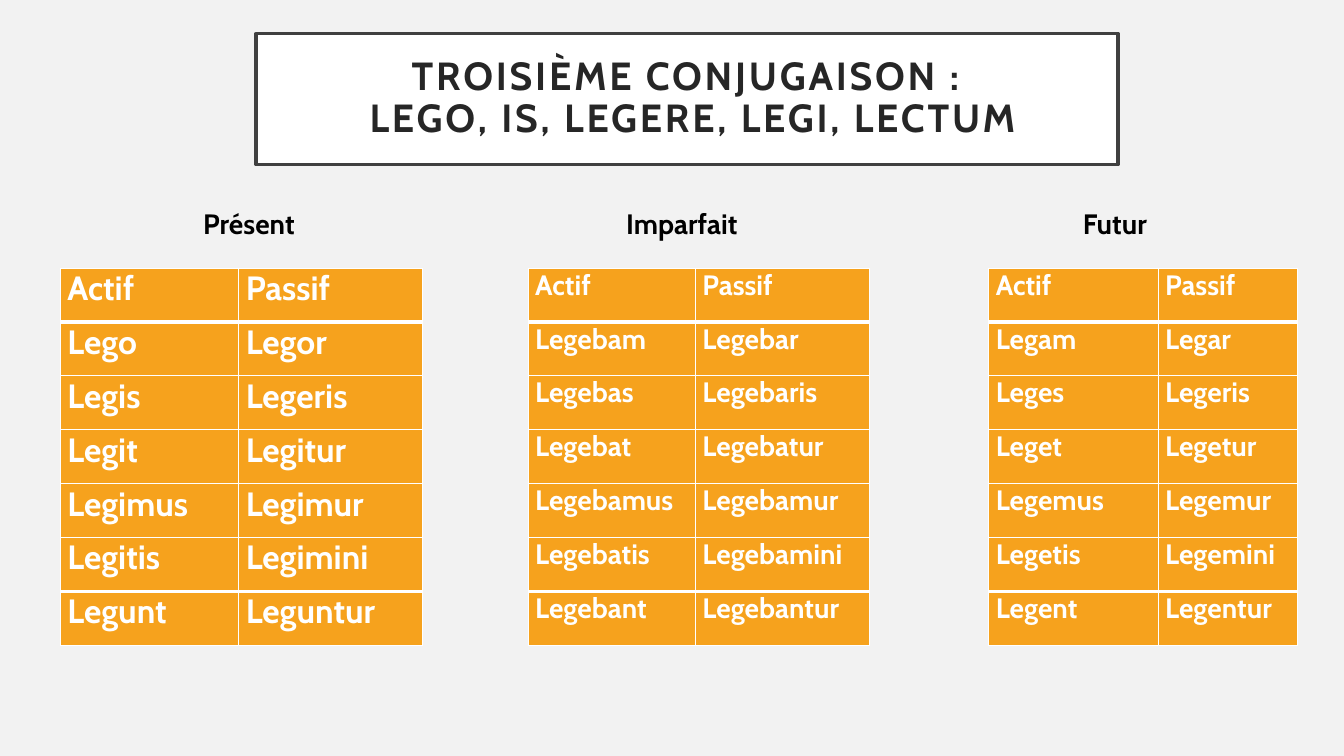
from lxml.etree import SubElement
from pptx import Presentation
from pptx.dml.color import RGBColor
from pptx.enum.text import MSO_ANCHOR, MSO_AUTO_SIZE, PP_ALIGN
from pptx.oxml.ns import qn
from pptx.util import Pt

FONT = "Cabin"
BACKGROUND = RGBColor(0xF2, 0xF2, 0xF2)
WHITE = RGBColor(0xFF, 0xFF, 0xFF)
BLACK = RGBColor(0, 0, 0)
ORANGE = RGBColor(0xF6, 0xA2, 0x1D)
FRAME = RGBColor(0x40, 0x40, 0x40)
TITLE_INK = RGBColor(0x26, 0x26, 0x26)

TITLE = "TROISIÈME CONJUGAISON :\v LEGO, IS, LEGERE, LEGI, LECTUM"
HEADER = ("Actif", "Passif")
TENSES = [
    {"name": "Présent", "left": 43.2, "widths": (127.4, 131), "size": 24,
     "forms": [("Lego", "Legor"), ("Legis", "Legeris"), ("Legit", "Legitur"),
               ("Legimus", "Legimur"), ("Legitis", "Legimini"),
               ("Legunt", "Leguntur")]},
    {"name": "Imparfait", "left": 377.3, "widths": (119.5, 124.6), "size": 20,
     "forms": [("Legebam", "Legebar"), ("Legebas", "Legebaris"),
               ("Legebat", "Legebatur"), ("Legebamus", "Legebamur"),
               ("Legebatis", "Legebamini"), ("Legebant", "Legebantur")]},
    {"name": "Futur", "left": 706.3, "widths": (121, 99.4), "size": 20,
     "forms": [("Legam", "Legar"), ("Leges", "Legeris"), ("Leget", "Legetur"),
               ("Legemus", "Legemur"), ("Legetis", "Legemini"),
               ("Legent", "Legentur")]},
]
LABEL_LEFT, LABEL_STEP, LABEL_TOP = 111.6, 309.25, 144
LABEL_WIDTH, LABEL_HEIGHT = 132.5, 31.5
TABLE_TOP, ROW_HEIGHT = 191.5, 38.5
THIN, THICK = 1, 3


def style(p, size, color):
    p.font.name = FONT
    p.font.size = Pt(size)
    p.font.bold = True
    p.font.color.rgb = color


def set_borders(cell, top, bottom):
    tcPr = cell._tc.get_or_add_tcPr()
    for tag, width in (("lnL", THIN), ("lnR", THIN), ("lnT", top), ("lnB", bottom)):
        ln = SubElement(tcPr, qn(f"a:{tag}"), w=str(Pt(width)))
        fill = SubElement(ln, qn("a:solidFill"))
        SubElement(fill, qn("a:srgbClr"), val=str(WHITE))


def add_title(slide):
    sp = slide.shapes.title
    sp.left, sp.top, sp.width, sp.height = Pt(183), Pt(24), Pt(615.5), Pt(93.5)
    sp.fill.solid()
    sp.fill.fore_color.rgb = WHITE
    sp.line.color.rgb = FRAME
    sp.line.width = Pt(2.5)
    tf = sp.text_frame
    tf.word_wrap = True
    tf.vertical_anchor = MSO_ANCHOR.MIDDLE
    tf.margin_left = tf.margin_right = tf.margin_top = tf.margin_bottom = Pt(14.4)
    p = tf.paragraphs[0]
    p.text = TITLE
    p.alignment = PP_ALIGN.CENTER
    p.line_spacing = 0.9
    style(p, 28, TITLE_INK)
    for r in p.runs:
        r._r.get_or_add_rPr().set("spc", "200")


def add_label(slide, text, left):
    sp = slide.shapes.add_textbox(Pt(left), Pt(LABEL_TOP), Pt(LABEL_WIDTH), Pt(LABEL_HEIGHT))
    tf = sp.text_frame
    tf.word_wrap = True
    tf.auto_size = MSO_AUTO_SIZE.SHAPE_TO_FIT_TEXT
    tf.vertical_anchor = MSO_ANCHOR.MIDDLE
    p = tf.paragraphs[0]
    p.text = text
    p.alignment = PP_ALIGN.CENTER
    style(p, 20, BLACK)


def add_forms(slide, tense):
    rows = [HEADER, *tense["forms"]]
    last = len(rows) - 1
    widths = tense["widths"]
    table = slide.shapes.add_table(
        len(rows), len(widths), Pt(tense["left"]), Pt(TABLE_TOP),
        Pt(sum(widths)), Pt(ROW_HEIGHT * len(rows))).table
    table.horz_banding = False
    for column, width in zip(table.columns, widths):
        column.width = Pt(width)
    for i, row in enumerate(rows):
        table.rows[i].height = Pt(ROW_HEIGHT)
        top = THICK if i in (1, last) else THIN
        bottom = THICK if i in (0, last - 1) else THIN
        for j, text in enumerate(row):
            cell = table.cell(i, j)
            set_borders(cell, top, bottom)
            cell.fill.solid()
            cell.fill.fore_color.rgb = ORANGE
            cell.margin_left = cell.margin_right = Pt(5)
            cell.margin_top = cell.margin_bottom = 0
            p = cell.text_frame.paragraphs[0]
            p.text = text
            style(p, tense["size"], WHITE)


def main():
    prs = Presentation()
    prs.slide_width, prs.slide_height = Pt(960), Pt(540)
    slide = prs.slides.add_slide(prs.slide_layouts[5])
    slide.background.fill.solid()
    slide.background.fill.fore_color.rgb = BACKGROUND
    add_title(slide)
    for i, tense in enumerate(TENSES):
        add_label(slide, tense["name"], LABEL_LEFT + i * LABEL_STEP)
        add_forms(slide, tense)
    prs.save("out.pptx")


if __name__ == "__main__":
    main()
